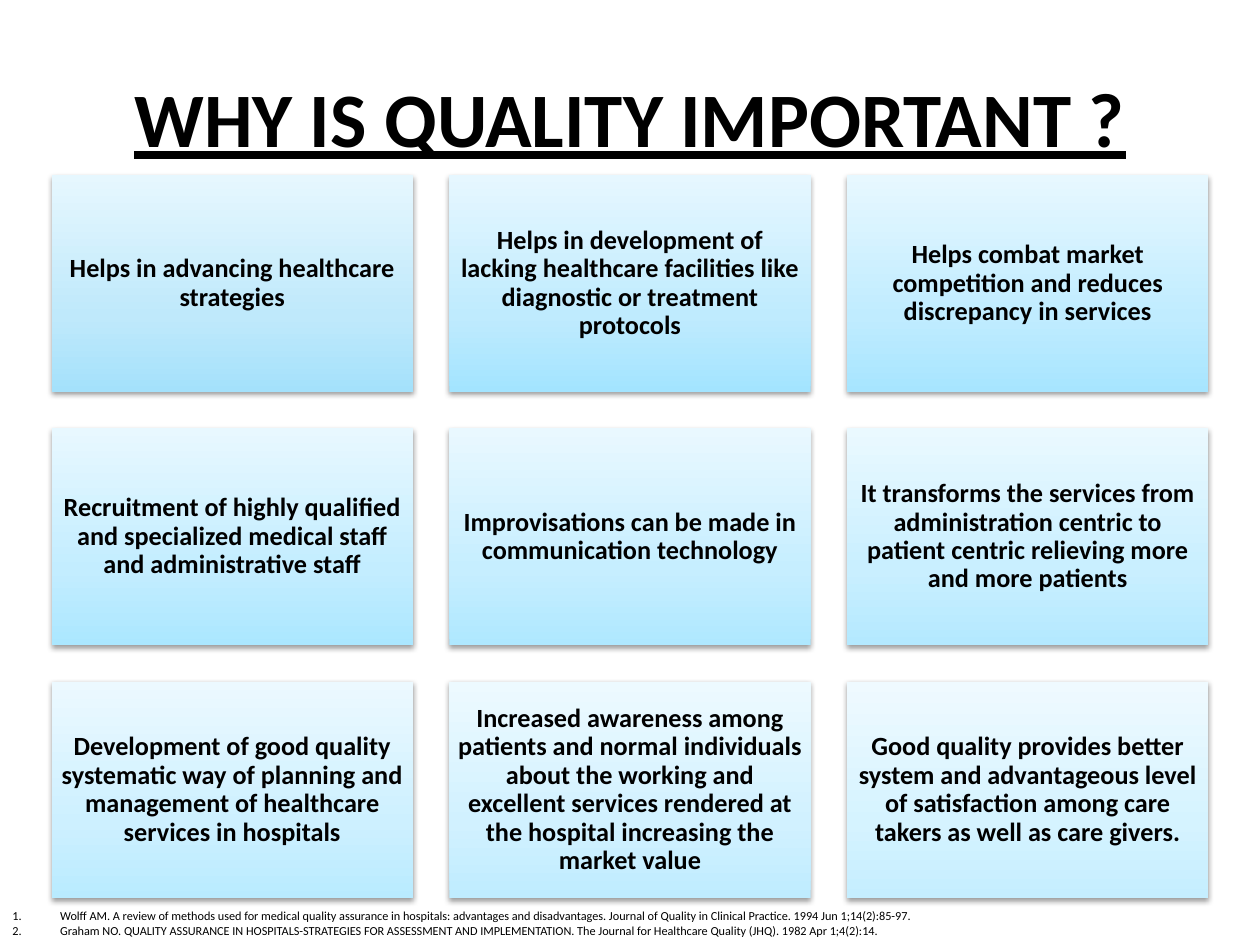
from copy import deepcopy

from lxml import etree
from pptx import Presentation
from pptx.dml.color import RGBColor
from pptx.enum.shapes import MSO_SHAPE
from pptx.enum.text import MSO_ANCHOR, PP_ALIGN
from pptx.oxml.ns import qn
from pptx.util import Inches, Pt

TITLE = "WHY IS QUALITY IMPORTANT ?"

# Text of each card with its gradient colours from bottom to top
CARDS = [
    ("Helps in advancing healthcare strategies", ("A4E1FB", "BFE9FB", "E6F7FE")),
    ("Helps in development of lacking healthcare facilities like diagnostic or treatment protocols",
     ("A3E4FF", "BFEBFE", "E6F7FF")),
    ("Helps combat market competition and reduces discrepancy in services",
     ("A7E5FF", "C0ECFF", "E7F8FF")),
    ("Recruitment of highly qualified and specialized medical staff and administrative staff",
     ("ABE7FF", "C3EDFF", "E8F8FF")),
    ("Improvisations can be made in communication technology",
     ("AFE8FF", "C6EEFF", "E9F8FF")),
    ("It transforms the services from administration centric to patient centric relieving more and more patients",
     ("B4E9FF", "C9EFFF", "EAF9FF")),
    ("Development of good quality systematic way of planning and management of healthcare services in hospitals",
     ("B9EBFF", "CDF0FF", "ECF9FF")),
    ("Increased awareness among patients and normal individuals about the working and excellent services "
     "rendered at the hospital increasing the market value",
     ("BFECFF", "D1F1FF", "EDFAFF")),
    ("Good quality provides better system and advantageous level of satisfaction among care takers "
     "as well as care givers.",
     ("C5EEFF", "D5F3FF", "EFFAFF")),
]
GRADIENT_POSITIONS = (0, 0.35, 1)

REFERENCES = [
    "Wolff AM. A review of methods used for medical quality assurance in hospitals: advantages and "
    "disadvantages. Journal of Quality in Clinical Practice. 1994 Jun 1;14(2):85-97.",
    "Graham NO. QUALITY ASSURANCE IN HOSPITALS-STRATEGIES FOR ASSESSMENT AND IMPLEMENTATION. "
    "The Journal for Healthcare Quality (JHQ). 1982 Apr 1;4(2):14.",
]


def color(hex_text):
    return RGBColor.from_string(hex_text)


def style_font(para, size, bold=False, underline=False):
    for span in para.runs:
        font = span.font
        font.name = "Calibri"
        font.size = Pt(size)
        font.bold = bold
        font.underline = underline
        font.color.rgb = color("000000")


def fill_gradient(shape, hex_colors):
    shape.fill.gradient()
    shape.fill.gradient_angle = 90
    stop_list = shape._element.spPr.find(".//" + qn("a:gsLst"))
    stop_list.insert(1, deepcopy(stop_list[0]))
    for stop, position, hex_text in zip(shape.fill.gradient_stops, GRADIENT_POSITIONS, hex_colors):
        stop.position = position
        stop.color.rgb = color(hex_text)


def add_soft_shadow(shape):
    shape.shadow.inherit = False
    effects = shape._element.spPr.find(qn("a:effectLst"))
    shadow = etree.SubElement(effects, qn("a:outerShdw"), blurRad=str(Pt(3.1)), dist=str(Pt(1.6)),
                              dir="5400000", rotWithShape="0")
    shade = etree.SubElement(shadow, qn("a:srgbClr"), val="000000")
    etree.SubElement(shade, qn("a:alpha"), val="38000")


def place_title(slide, left, top, width, height):
    title = slide.shapes.title
    title.left, title.top, title.width, title.height = left, top, width, height
    title.text_frame.text = TITLE
    title.text_frame.vertical_anchor = MSO_ANCHOR.MIDDLE
    para = title.text_frame.paragraphs[0]
    para.alignment = PP_ALIGN.CENTER
    style_font(para, 44, bold=True, underline=True)


def add_card(slide, text, hex_colors, left, top, width, height):
    card = slide.shapes.add_shape(MSO_SHAPE.RECTANGLE, left, top, width, height)
    fill_gradient(card, hex_colors)
    card.line.fill.background()
    add_soft_shadow(card)
    frame = card.text_frame
    frame.word_wrap = True
    frame.vertical_anchor = MSO_ANCHOR.MIDDLE
    frame.margin_left = frame.margin_right = frame.margin_top = frame.margin_bottom = Inches(0.06)
    frame.text = text
    para = frame.paragraphs[0]
    para.alignment = PP_ALIGN.CENTER
    para.line_spacing = 0.9
    style_font(para, 15, bold=True)


def add_card_grid(slide, left, top, width, height, columns=3, gap=Inches(0.29)):
    rows = len(CARDS) // columns
    card_width = (width - gap * (columns - 1)) // columns
    card_height = (height - gap * (rows - 1)) // rows
    for index, (text, hex_colors) in enumerate(CARDS):
        row, column = divmod(index, columns)
        add_card(slide, text, hex_colors, left + column * (card_width + gap),
                 top + row * (card_height + gap), card_width, card_height)


def add_references(slide, left, top, width, height):
    box = slide.shapes.add_textbox(left, top, width, height)
    frame = box.text_frame
    frame.word_wrap = True
    frame.text = "\n".join(REFERENCES)
    for para in frame.paragraphs:
        properties = para._p.get_or_add_pPr()
        properties.set("marL", str(Inches(0.38)))
        properties.set("indent", str(-Inches(0.38)))
        etree.SubElement(properties, qn("a:buFont"), typeface="+mj-lt")
        etree.SubElement(properties, qn("a:buAutoNum"), type="arabicPeriod")
        style_font(para, 7)


def main():
    deck = Presentation()
    deck.slide_width, deck.slide_height = Inches(10), Inches(7.5)
    slide = deck.slides.add_slide(deck.slide_layouts[5])  # title only

    place_title(slide, Inches(0.5), Inches(0.3), Inches(9), Inches(1.25))
    add_card_grid(slide, Inches(0.41), Inches(1.39), Inches(9.18), Inches(5.74))
    add_references(slide, Inches(0), Inches(7.16), Inches(10), Inches(0.34))

    deck.save("out.pptx")


if __name__ == "__main__":
    main()
